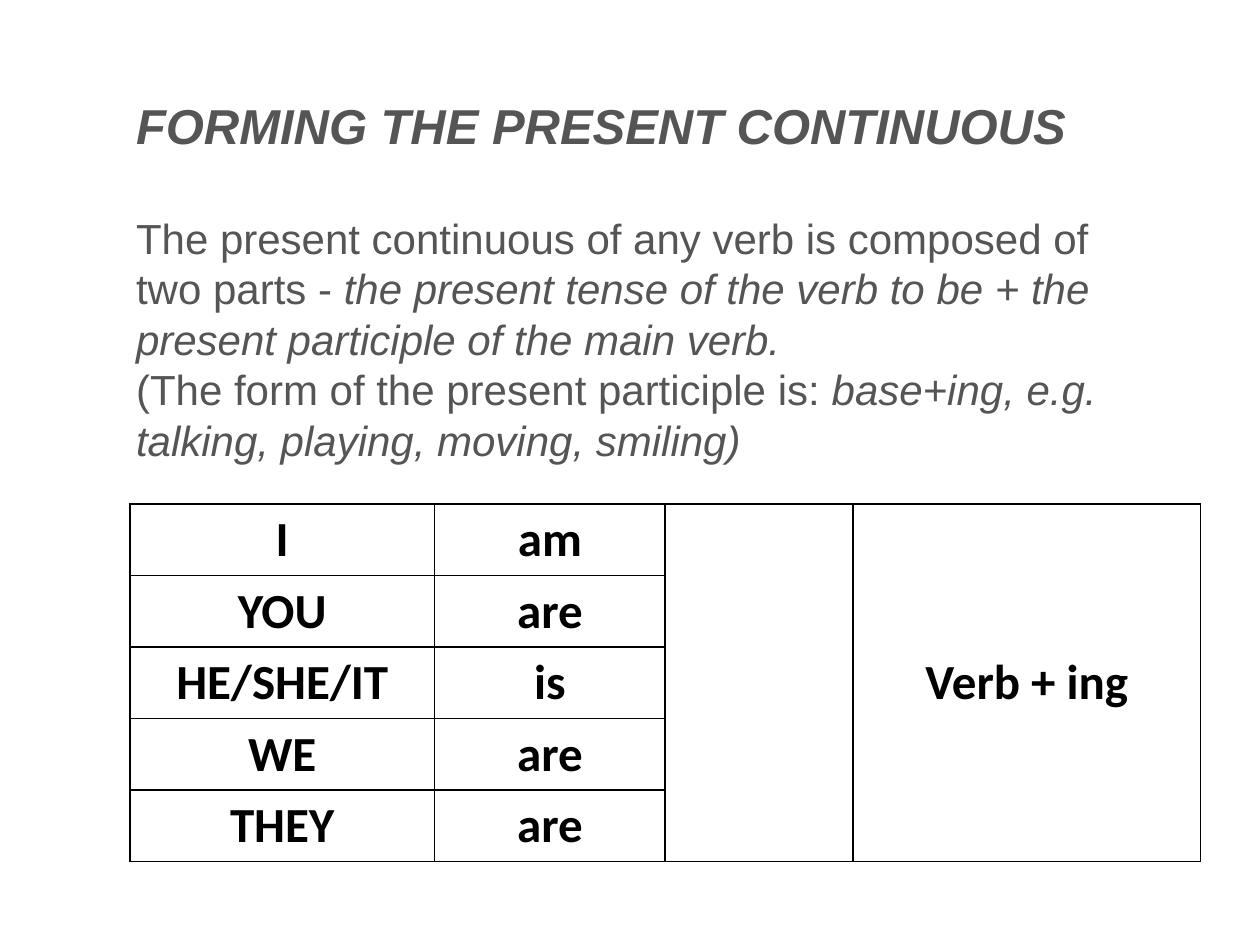
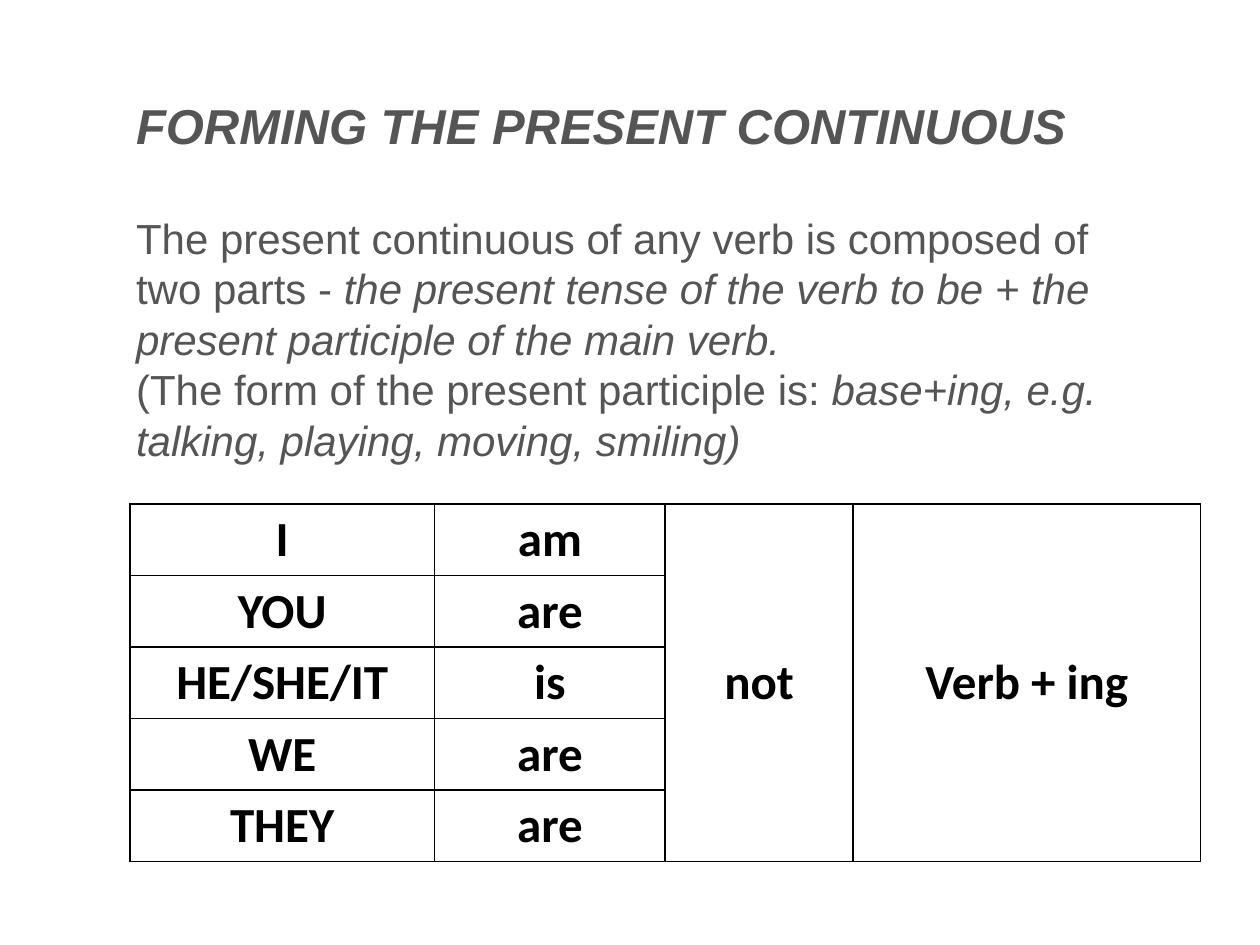
import pptx
import pptx.util
import pptx.dml.color
import pptx.enum.text
import pptx.oxml
import pptx.oxml.ns
from dataclasses import dataclass

HEADING = "FORMING THE PRESENT CONTINUOUS"
EXPLANATION = [
    [("The present continuous of any verb is composed of two parts - ", False),
     ("the present tense of the verb to be + the present participle of the main verb.", True)],
    [("(The form of the present participle is: ", False),
     ("base+ing, e.g. talking, playing, moving, smiling)", True)],
]
CONJUGATION = [("I", "am"), ("YOU", "are"), ("HE/SHE/IT", "is"), ("WE", "are"), ("THEY", "are")]
PARTICIPLE = "Verb + ing"
NEGATIONS = ["", "not"]


@dataclass(frozen=True)
class Theme:
    paper: str = "FFFFFF"
    prose: str = "555555"
    ink: str = "000000"
    prose_font: str = "Arial"
    grid_font: str = "Calibri"
    large: int = 28
    medium: int = 24
    border: float = 1
    heading_gap: float = 33.5


THEME = Theme()
SLIDE_SIZE = (10, 7.5)
RULE_BOX = (1.08, 0.6, 8.14, 3.17)
RULE_INSETS = (0, 0.14, 0, 0.07)
GRID_LEFT, GRID_TOP, GRID_HEIGHT = 1.03, 4, 2.84
COLUMN_WIDTHS = (2.42, 1.83, 1.49, 2.76)
SPANNING_COLUMNS = (2, 3)


def inches(*lengths):
    return [pptx.util.Inches(length) for length in lengths]


def rgb(color):
    return pptx.dml.color.RGBColor.from_string(color)


def paint(fill):
    fill.solid()
    fill.fore_color.rgb = rgb(THEME.paper)


def style(paragraph, face, size, color, bold, alignment):
    font = paragraph.font
    font.name, font.size, font.bold = face, pptx.util.Pt(size), bold
    font.color.rgb = rgb(color)
    paragraph.alignment = alignment


def add_rule(slide):
    rule = slide.shapes.title
    rule.left, rule.top, rule.width, rule.height = inches(*RULE_BOX)
    paint(rule.fill)
    frame = rule.text_frame
    (frame.margin_left, frame.margin_top,
     frame.margin_right, frame.margin_bottom) = inches(*RULE_INSETS)
    frame.word_wrap = True
    frame.auto_size = pptx.enum.text.MSO_AUTO_SIZE.NONE
    frame.vertical_anchor = pptx.enum.text.MSO_ANCHOR.MIDDLE
    left = pptx.enum.text.PP_ALIGN.LEFT

    frame.text = HEADING
    heading = frame.paragraphs[0]
    style(heading, THEME.prose_font, THEME.large, THEME.prose, True, left)
    heading.font.italic = True
    heading.space_after = pptx.util.Pt(THEME.heading_gap)

    for pieces in EXPLANATION:
        sentence = frame.add_paragraph()
        style(sentence, THEME.prose_font, THEME.medium, THEME.prose, False, left)
        for words, italic in pieces:
            piece = sentence.add_run()
            piece.text = words
            piece.font.italic = italic


def set_borders(cell, sides):
    properties = cell._tc.get_or_add_tcPr()
    for side in "LRTB":
        stroke = (f'<a:solidFill><a:srgbClr val="{THEME.ink}"/></a:solidFill>'
                  if side in sides else "<a:noFill/>")
        properties.append(pptx.oxml.parse_xml(
            f'<a:ln{side} {pptx.oxml.ns.nsdecls("a")} w="{pptx.util.Pt(THEME.border)}">'
            f'{stroke}</a:ln{side}>'))


def fill_cell(cell, words, sides):
    set_borders(cell, sides)
    paint(cell.fill)
    cell.vertical_anchor = pptx.enum.text.MSO_ANCHOR.MIDDLE
    cell.margin_top = cell.margin_bottom = pptx.util.Inches(0.04)
    cell.text = words
    style(cell.text_frame.paragraphs[0], THEME.grid_font, THEME.large, THEME.ink,
          True, pptx.enum.text.PP_ALIGN.CENTER)


def add_conjugation(slide, negation):
    count = len(CONJUGATION)
    grid = slide.shapes.add_table(
        count, len(COLUMN_WIDTHS),
        *inches(GRID_LEFT, GRID_TOP, sum(COLUMN_WIDTHS), GRID_HEIGHT)).table
    grid.first_row = grid.horz_banding = False
    for column, width in zip(grid.columns, COLUMN_WIDTHS):
        column.width = pptx.util.Inches(width)
    for row, forms in enumerate(CONJUGATION):
        shared = (negation, PARTICIPLE) if row == count // 2 else ("", "")
        outer = "LR" + "T" * (row == 0) + "B" * (row == count - 1)
        for column, words in enumerate(forms + shared):
            sides = outer if column in SPANNING_COLUMNS else "LRTB"
            fill_cell(grid.cell(row, column), words, sides)


def main():
    deck = pptx.Presentation()
    deck.slide_width, deck.slide_height = inches(*SLIDE_SIZE)
    for negation in NEGATIONS:
        slide = deck.slides.add_slide(deck.slide_layouts[5])
        add_rule(slide)
        add_conjugation(slide, negation)
    deck.save("out.pptx")


if __name__ == "__main__":
    main()
